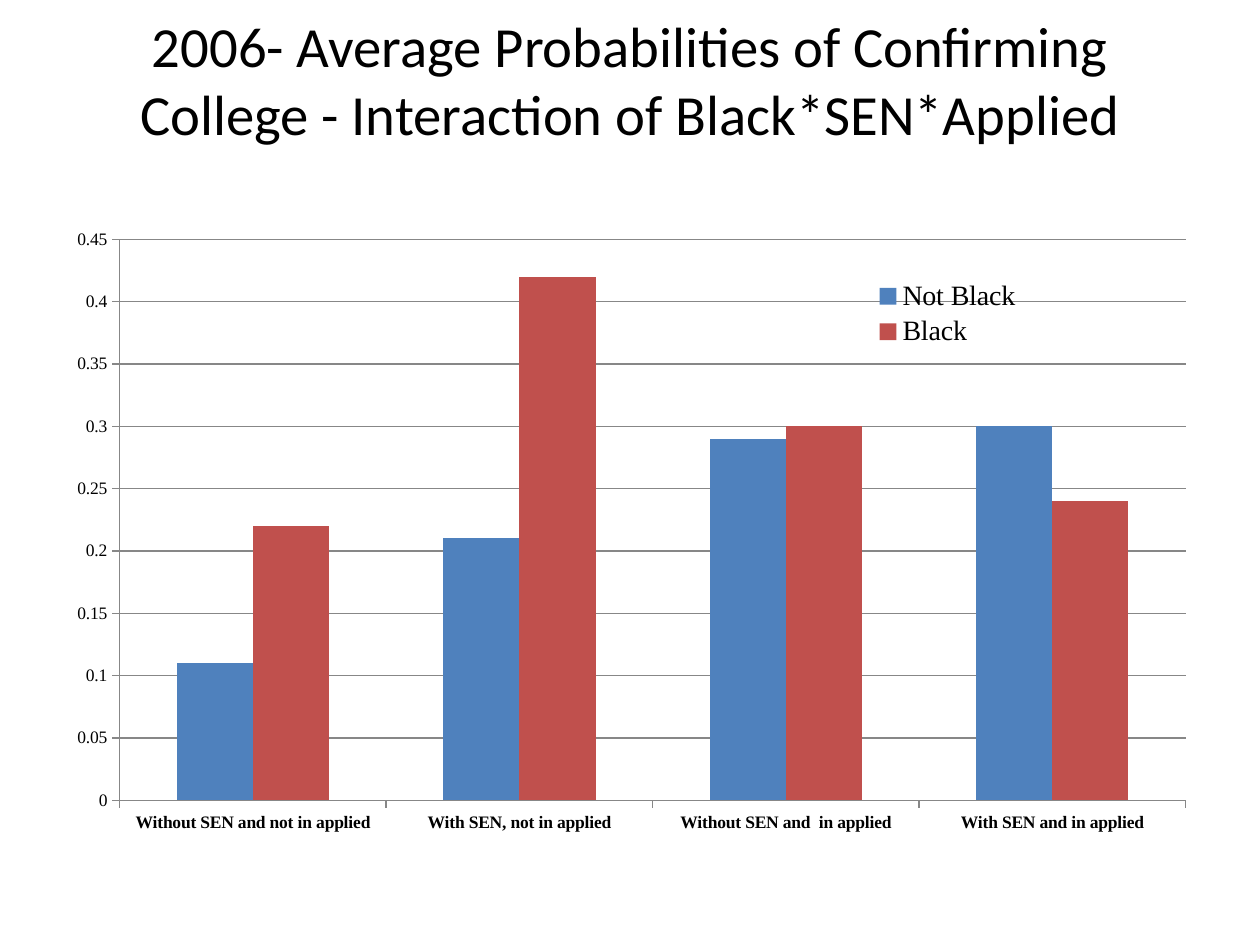
from lxml import etree
from pptx import Presentation
from pptx.chart.data import CategoryChartData
from pptx.dml.color import RGBColor
from pptx.enum import chart as ch, text
from pptx.oxml import ns
from pptx.util import Inches, Pt

TITLE = "2006- Average Probabilities of Confirming College - Interaction of Black*SEN*Applied"
CATEGORIES = [
    "Without SEN and not in applied",
    "With SEN, not in applied",
    "Without SEN and  in applied",
    "With SEN and in applied",
]
BLACK = RGBColor(0x00, 0x00, 0x00)
GRAY = RGBColor(0x87, 0x87, 0x87)
BLUE = RGBColor(0x4F, 0x81, 0xBD)
RED = RGBColor(0xC0, 0x50, 0x4D)
SERIES = [
    ("Not Black", (0.11, 0.21, 0.29, 0.3), BLUE),
    ("Black", (0.22, 0.42, 0.3, 0.24), RED),
]
PLOT_LAYOUT = {"layoutTarget": "inner", "xMode": "edge", "yMode": "edge",
               "x": 0.05, "y": 0.03, "w": 0.94, "h": 0.9}
LEGEND_LAYOUT = {"xMode": "edge", "yMode": "edge",
                 "x": 0.71, "y": 0.09, "w": 0.14, "h": 0.12}


def set_font(font, size, name="Times New Roman", bold=False):
    for key, value in {"size": Pt(size), "name": name, "bold": bold}.items():
        setattr(font, key, value)
    font.color.rgb = BLACK


def set_layout(parent, values, after):
    for old in parent.findall(ns.qn("c:layout")):
        parent.remove(old)
    layout = etree.Element(ns.qn("c:layout"))
    manual = etree.SubElement(layout, ns.qn("c:manualLayout"))
    for key, value in values.items():
        etree.SubElement(manual, ns.qn(f"c:{key}")).set("val", str(value))
    if after is None:
        parent.insert(0, layout)
    else:
        after.addnext(layout)


def add_title(s):
    tf = s.shapes.add_textbox(Inches(0.5), Inches(0), Inches(9), Inches(1.25)).text_frame
    for key, value in {"word_wrap": True, "vertical_anchor": text.MSO_ANCHOR.MIDDLE}.items():
        setattr(tf, key, value)
    p = tf.paragraphs[0]
    p.alignment = text.PP_ALIGN.CENTER
    r = p.add_run()
    r.text = TITLE
    set_font(r.font, 32.4, "Calibri")


def add_bars(s):
    data = CategoryChartData()
    data.categories = CATEGORIES
    for name, values, _ in SERIES:
        data.add_series(name, values)
    chart = s.shapes.add_chart(ch.XL_CHART_TYPE.COLUMN_CLUSTERED, Inches(0.5), Inches(1.75),
                               Inches(9), Inches(4.95), data).chart
    chart.has_title = False
    set_font(chart.font, 10)

    plot = chart.plots[0]
    for key, value in {"gap_width": 150, "overlap": 0, "vary_by_categories": False}.items():
        setattr(plot, key, value)
    for series, (_, _, color) in zip(plot.series, SERIES):
        series.format.fill.solid()
        series.format.fill.fore_color.rgb = color

    val, cat = chart.value_axis, chart.category_axis
    for key, value in {"minimum_scale": 0, "maximum_scale": 0.45, "major_unit": 0.05,
                       "has_major_gridlines": True}.items():
        setattr(val, key, value)
    val.tick_labels.number_format = "General"
    val.tick_labels.number_format_is_linked = False
    for axis, bold in ((val, False), (cat, True)):
        axis.major_tick_mark = ch.XL_TICK_MARK.OUTSIDE
        set_font(axis.tick_labels.font, 10, bold=bold)
    for line in (val.format.line, cat.format.line, val.major_gridlines.format.line):
        line.color.rgb = GRAY
        line.width = Pt(0.75)

    chart.has_legend = True
    legend = chart.legend
    legend.position = ch.XL_LEGEND_POSITION.RIGHT
    legend.include_in_layout = False
    set_font(legend.font, 16)
    root = chart.element
    set_layout(root.find(".//" + ns.qn("c:plotArea")), PLOT_LAYOUT, None)
    set_layout(root.find(".//" + ns.qn("c:legend")), LEGEND_LAYOUT,
               root.find(".//" + ns.qn("c:legendPos")))


def main():
    prs = Presentation()
    prs.slide_width, prs.slide_height = Inches(10), Inches(7.5)
    s = prs.slides.add_slide(prs.slide_layouts[6])
    add_title(s)
    add_bars(s)
    prs.save("out.pptx")


if __name__ == "__main__":
    main()
